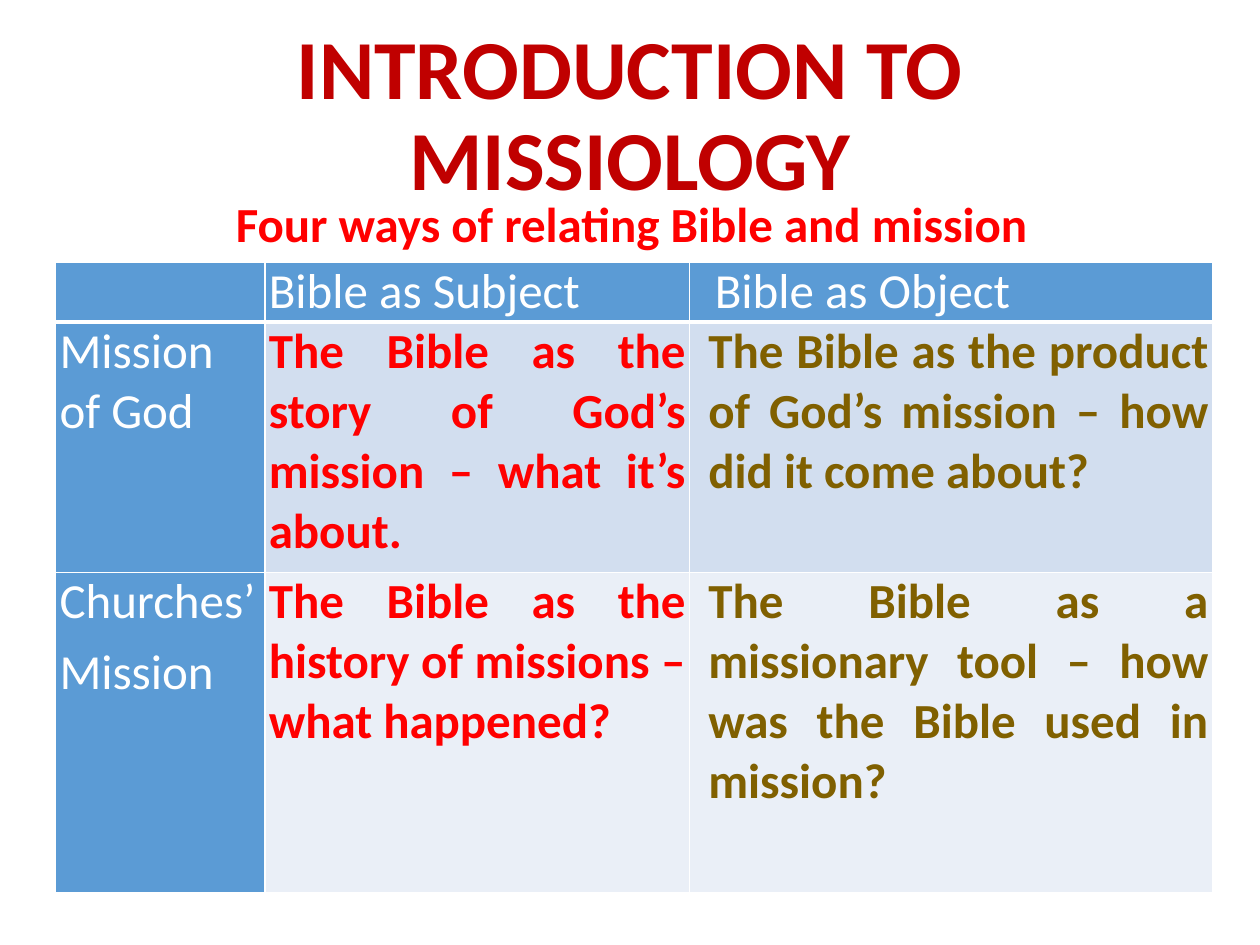
import dataclasses

import pptx
import pptx.dml.color
import pptx.enum.text
import pptx.oxml
import pptx.oxml.ns
import pptx.util

Cm = pptx.util.Cm
Pt = pptx.util.Pt
Align = pptx.enum.text.PP_ALIGN
Anchor = pptx.enum.text.MSO_ANCHOR
SPACE = pptx.oxml.ns.nsdecls("a")


@dataclasses.dataclass(frozen=True)
class Theme:
    font: str = "Calibri"
    title: int = 48
    text: int = 28
    dark: str = "C00000"
    red: str = "FF0000"
    gold: str = "806000"
    white: str = "FFFFFF"
    blue: str = "5B9BD5"
    bands: tuple = ("D2DEEF", "EAEFF7")


class Deck:
    def __init__(self, theme):
        self.theme = theme
        self.show = pptx.Presentation()
        self.show.slide_width = Cm(25.4)
        self.show.slide_height = Cm(19.05)
        self.slide = self.show.slides.add_slide(self.show.slide_layouts[1])

    def ink(self, para, text, size, color, bold=False):
        """Add one formatted run to a paragraph."""
        run = para.add_run()
        run.text = text
        font = run.font
        font.name, font.size, font.bold = self.theme.font, Pt(size), bold
        font.color.rgb = pptx.dml.color.RGBColor.from_string(color)

    def holder(self, index, box, anchor, text, size, color):
        """Place a template placeholder and fill it with one centred line."""
        shape = self.slide.placeholders[index]
        shape.left, shape.top, shape.width, shape.height = map(Cm, box)
        frame = shape.text_frame
        frame.word_wrap = True
        frame.auto_size = pptx.enum.text.MSO_AUTO_SIZE.NONE
        frame.vertical_anchor = anchor
        para = frame.paragraphs[0]
        props = para._p.get_or_add_pPr()
        props.set("marL", "0")
        props.set("indent", "0")
        props.append(pptx.oxml.parse_xml(f"<a:buNone {SPACE}/>"))
        para.alignment = Align.CENTER
        para.line_spacing = 0.9
        para.space_before = Pt(0)
        self.ink(para, text, size, color, bold=True)

    def edge(self, cell, low):
        """Draw white borders, with the bottom one low points wide."""
        props = cell._tc.get_or_add_tcPr()
        for side, width in (("L", 1), ("R", 1), ("T", 1), ("B", low)):
            props.append(pptx.oxml.parse_xml(
                f'<a:ln{side} {SPACE} w="{Pt(width)}">'
                f'<a:solidFill><a:srgbClr val="{self.theme.white}"/>'
                f'</a:solidFill></a:ln{side}>'))

    def cell(self, cell, lines, fill, color, bold, indent, low):
        self.edge(cell, low)
        cell.fill.solid()
        cell.fill.fore_color.rgb = pptx.dml.color.RGBColor.from_string(fill)
        cell.margin_left = cell.margin_right = Cm(0.08)
        cell.margin_top = cell.margin_bottom = 0
        frame = cell.text_frame
        for i, line in enumerate(lines):
            para = frame.add_paragraph() if i else frame.paragraphs[0]
            para._p.get_or_add_pPr().set("marL", str(Cm(indent)))
            para.alignment = Align.JUSTIFY
            para.space_after = Pt(6)
            self.ink(para, line, self.theme.text, color, bold)

    def table(self, box, widths, heights, rows):
        theme = self.theme
        grid = self.slide.shapes.add_table(
            len(rows), len(widths), *map(Cm, box)).table
        for col, width in zip(grid.columns, widths):
            col.width = Cm(width)
        for row, height in zip(grid.rows, heights):
            row.height = Cm(height)
        inks = (theme.white, theme.red, theme.gold)
        for r, row in enumerate(rows):
            for c, lines in enumerate(row):
                head = r == 0 or c == 0
                fill = theme.blue if head else theme.bands[(r - 1) % 2]
                color = theme.white if head else inks[c]
                indent = (0.43 if r == 0 else 0.3) if c == 2 else 0
                self.cell(grid.cell(r, c), lines, fill, color, not head,
                          indent, 3 if r == 0 else 1)


def main():
    theme = Theme()
    deck = Deck(theme)
    deck.holder(0, (1.3, 1.02, 22.8, 2.72), Anchor.MIDDLE,
                "INTRODUCTION TO MISSIOLOGY", theme.title, theme.dark)
    deck.holder(1, (0.74, 3.91, 23.98, 14.73), Anchor.TOP,
                "Four ways of relating Bible and mission",
                theme.text, theme.red)
    rows = [
        [[], ["Bible as Subject"], ["Bible as Object"]],
        [["Mission of God"],
         ["The Bible as the story of God’s mission – what it’s about."],
         ["The Bible as the product of God’s mission – "
          "how did it come about?"]],
        [["Churches’", "Mission"],
         ["The Bible as the history of missions – what happened?"],
         ["The Bible as a missionary tool – "
          "how was the Bible used in mission?"]],
    ]
    deck.table((1.12, 5.28, 23.32, 12.7), (4.22, 8.56, 10.54),
               (1.09, 5.05, 6.45), rows)
    deck.show.save("out.pptx")


if __name__ == "__main__":
    main()
